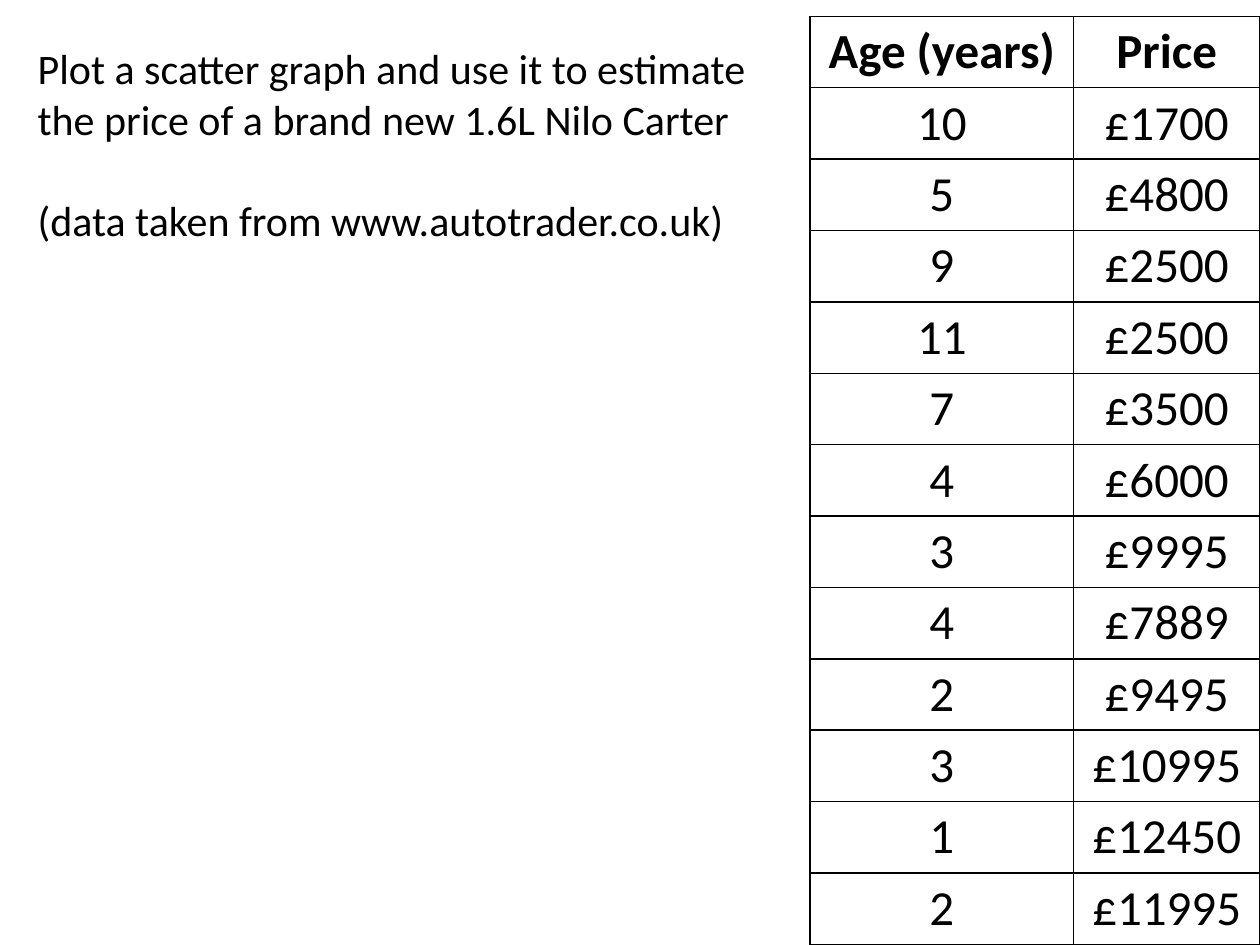
from pptx import Presentation
from pptx.dml.color import RGBColor
from pptx.enum.text import MSO_ANCHOR, PP_ALIGN
from pptx.oxml import parse_xml
from pptx.oxml.ns import nsdecls
from pptx.util import Inches, Pt

BLACK = RGBColor(0, 0, 0)
WHITE = RGBColor(255, 255, 255)
CENTER = PP_ALIGN.CENTER
MIDDLE = MSO_ANCHOR.MIDDLE
FONT = "Calibri"

TASK = [
    "Plot a scatter graph and use it to estimate the price of a brand new 1.6L Nilo Carter",
    "(data taken from www.autotrader.co.uk)",
]
HEAD = ("Age (years)", "Price")
CARS = [
    (10, 1700), (5, 4800), (9, 2500), (11, 2500), (7, 3500), (4, 6000),
    (3, 9995), (4, 7889), (2, 9495), (3, 10995), (1, 12450), (2, 11995),
]
WIDTHS = (2.09, 1.48)
LEFT, TOP, HEIGHT = 6.43, 0.13, 7.37


def add_run(para, text, size, bold=False):
    run = para.add_run()
    run.text = text
    font = run.font
    font.name, font.size, font.bold = FONT, Pt(size), bold
    font.color.rgb = BLACK


def add_border(cell):
    props = cell._tc.get_or_add_tcPr()
    for spot, side in enumerate(("lnL", "lnR", "lnT", "lnB")):
        props.insert(spot, parse_xml(
            f'<a:{side} {nsdecls("a")} w="{Pt(1)}"><a:solidFill>'
            f'<a:srgbClr val="{BLACK}"/></a:solidFill></a:{side}>'))


def add_task(slide):
    box = slide.shapes.add_textbox(Inches(0.2), Inches(0.29), Inches(5.91), Inches(1.72))
    frame = box.text_frame
    frame.word_wrap = True
    for i, line in enumerate(TASK):
        para = frame.add_paragraph() if i else frame.paragraphs[0]
        if i:
            para.space_before = Pt(29)
        add_run(para, line, 24)


def add_prices(slide):
    rows = [HEAD] + [(str(age), f"£{price}") for age, price in CARS]
    table = slide.shapes.add_table(
        len(rows), len(HEAD), Inches(LEFT), Inches(TOP),
        Inches(sum(WIDTHS)), Inches(HEIGHT)).table
    table.horz_banding = False
    for col, width in zip(table.columns, WIDTHS):
        col.width = Inches(width)
    for r, row in enumerate(rows):
        table.rows[r].height = Inches(HEIGHT / len(rows))
        for c, text in enumerate(row):
            cell = table.cell(r, c)
            cell.margin_top = cell.margin_bottom = Inches(0.04)
            cell.vertical_anchor = MIDDLE
            cell.fill.solid()
            cell.fill.fore_color.rgb = WHITE
            add_border(cell)
            para = cell.text_frame.paragraphs[0]
            para.alignment = CENTER
            add_run(para, text, 28, bold=r == 0)


def main():
    deck = Presentation()
    deck.slide_width, deck.slide_height = Inches(10), Inches(7.5)
    slide = deck.slides.add_slide(deck.slide_layouts[6])
    add_task(slide)
    add_prices(slide)
    deck.save("out.pptx")


if __name__ == "__main__":
    main()
